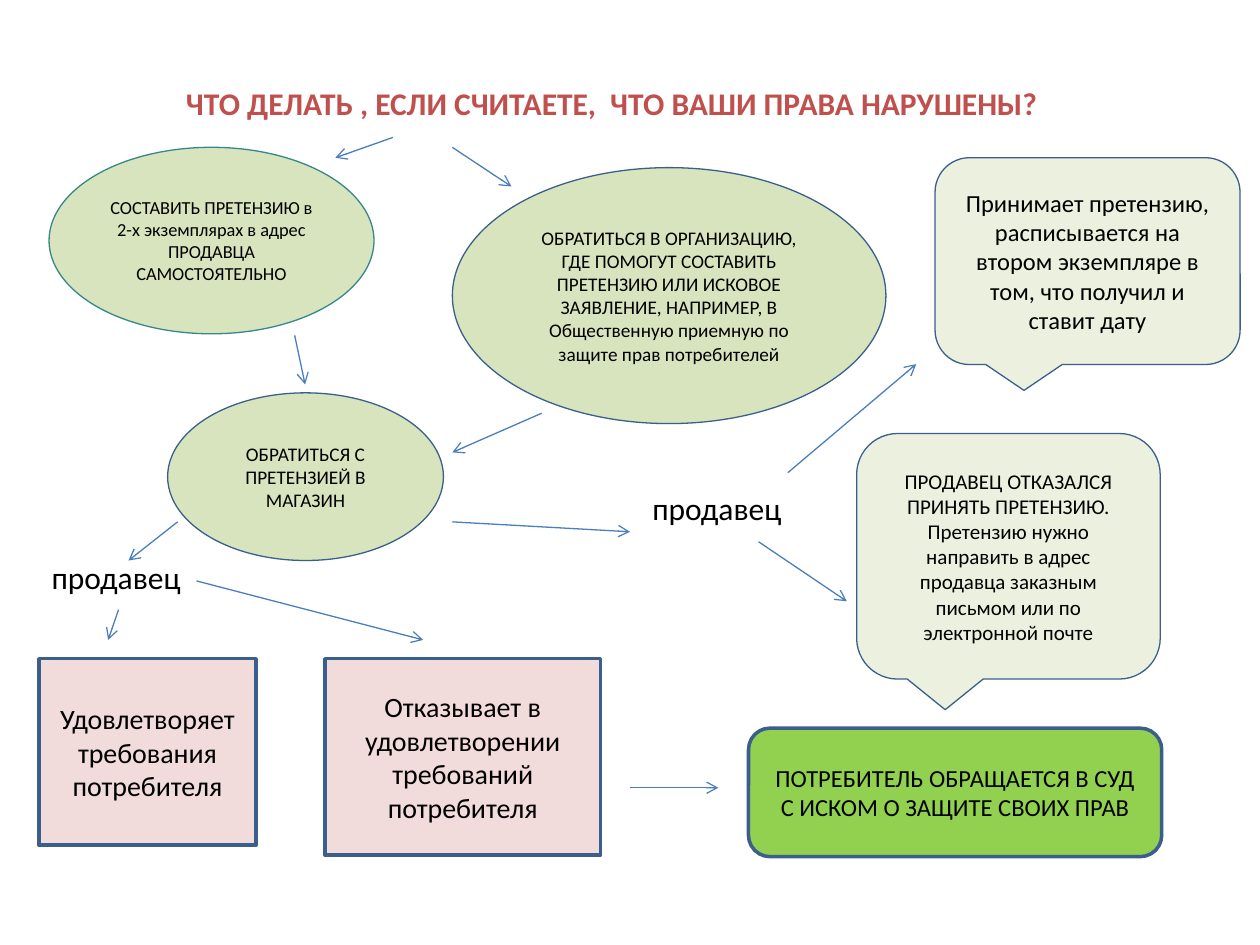
from dataclasses import dataclass

from lxml import etree
from pptx import Presentation
from pptx.dml.color import RGBColor
from pptx.enum.shapes import MSO_CONNECTOR as Connector, MSO_SHAPE as Shape
from pptx.enum.text import MSO_ANCHOR as Anchor, PP_ALIGN as Align
from pptx.oxml.ns import qn
from pptx.util import Cm, Pt


@dataclass(frozen=True)
class Theme:
    font: str = "Calibri"
    text: str = "000000"
    title: str = "C0504D"
    action: str = "D7E4BD"
    reply: str = "EBF1DE"
    decision: str = "F2DCDB"
    court: str = "92D050"
    outline: str = "3A5F8C"
    teal_outline: str = "36868C"
    arrow: str = "4B7EBC"
    thin: float = 0.75
    thick: float = 2
    heading_size: float = 18
    decision_size: float = 16
    large_size: float = 14
    medium_size: float = 12
    small_size: float = 11
    tiny_size: float = 10.5


class FlowSlide:
    def __init__(self, slide, theme):
        self.slide = slide
        self.theme = theme

    def fill_text(self, frame, lines, size, color, bold=False, align=Align.LEFT):
        frame.word_wrap = True
        for index, line in enumerate(lines):
            paragraph = frame.add_paragraph() if index else frame.paragraphs[0]
            paragraph.text = line
            paragraph.alignment = align
            font = paragraph.font
            font.name, font.size, font.bold = self.theme.font, Pt(size), bold
            font.color.rgb = RGBColor.from_string(color)

    def label(self, box, text, color=None, bold=False):
        text_box = self.slide.shapes.add_textbox(*map(Cm, box))
        self.fill_text(text_box.text_frame, [text], self.theme.heading_size,
                       color or self.theme.text, bold)

    def node(self, kind, box, lines, size, fill, width, outline=None):
        shape = self.slide.shapes.add_shape(kind, *map(Cm, box))
        shape.shadow.inherit = False
        shape.fill.solid()
        shape.fill.fore_color.rgb = RGBColor.from_string(fill)
        shape.line.color.rgb = RGBColor.from_string(outline or self.theme.outline)
        shape.line.width = Pt(width)
        shape.text_frame.vertical_anchor = Anchor.MIDDLE
        self.fill_text(shape.text_frame, lines, size, self.theme.text, align=Align.CENTER)

    def arrow(self, start, end):
        connector = self.slide.shapes.add_connector(
            Connector.STRAIGHT, *map(Cm, start + end))
        connector.line.color.rgb = RGBColor.from_string(self.theme.arrow)
        connector.line.width = Pt(self.theme.thin)
        properties = connector._element.spPr
        etree.SubElement(properties.find(qn("a:ln")), qn("a:tailEnd"), type="arrow")
        etree.SubElement(properties, qn("a:effectLst"))


def main():
    presentation = Presentation()
    presentation.slide_width, presentation.slide_height = Cm(25.4), Cm(19.05)
    theme = Theme()
    flow = FlowSlide(presentation.slides.add_slide(presentation.slide_layouts[6]), theme)

    # Title
    flow.label((3.5, 1.57, 20.3, 1.02),
               "ЧТО ДЕЛАТЬ , ЕСЛИ СЧИТАЕТЕ,  ЧТО ВАШИ ПРАВА НАРУШЕНЫ?",
               theme.title, bold=True)

    # Consumer's actions
    for box, text, size, outline in (
        ((0.99, 2.97, 6.55, 3.76),
         "СОСТАВИТЬ ПРЕТЕНЗИЮ в 2-х экземплярах в адрес ПРОДАВЦА САМОСТОЯТЕЛЬНО",
         theme.tiny_size, theme.teal_outline),
        ((9.12, 3.38, 8.74, 5.16),
         "ОБРАТИТЬСЯ В ОРГАНИЗАЦИЮ, ГДЕ ПОМОГУТ СОСТАВИТЬ ПРЕТЕНЗИЮ ИЛИ ИСКОВОЕ "
         "ЗАЯВЛЕНИЕ, НАПРИМЕР, В Общественную приемную по защите прав потребителей",
         theme.small_size, theme.outline),
        ((3.38, 7.92, 5.56, 3.38), "ОБРАТИТЬСЯ С ПРЕТЕНЗИЕЙ В МАГАЗИН",
         theme.small_size, theme.outline),
    ):
        flow.node(Shape.OVAL, box, [text], size, theme.action, theme.thin, outline)

    # Seller labels
    for box in ((0.79, 11.13, 4.37, 1.02), (12.9, 9.73, 4.17, 1.02)):
        flow.label(box, "продавец")

    # Seller's decisions
    for box, text in (
        ((0.79, 13.28, 4.37, 3.76), "Удовлетворяет требования потребителя"),
        ((6.55, 13.28, 5.56, 3.96), "Отказывает в удовлетворении требований потребителя"),
    ):
        flow.node(Shape.RECTANGLE, box, [text], theme.decision_size,
                  theme.decision, theme.thick)

    # Seller's replies to the claim
    for box, lines, size in (
        ((18.85, 3.18, 6.15, 4.17),
         ["Принимает претензию, расписывается на втором экземпляре в том, "
          "что получил и ставит дату"], theme.large_size),
        ((17.27, 8.74, 6.12, 4.95),
         ["ПРОДАВЕЦ ОТКАЗАЛСЯ ПРИНЯТЬ ПРЕТЕНЗИЮ.",
          "Претензию нужно направить в адрес продавца заказным письмом "
          "или по электронной почте"], theme.medium_size),
    ):
        flow.node(Shape.ROUNDED_RECTANGULAR_CALLOUT, box, lines, size,
                  theme.reply, theme.thin)

    # Court
    flow.node(Shape.ROUNDED_RECTANGLE, (15.09, 14.68, 8.33, 2.59),
              ["ПОТРЕБИТЕЛЬ ОБРАЩАЕТСЯ В СУД С ИСКОМ О ЗАЩИТЕ СВОИХ ПРАВ"],
              theme.large_size, theme.court, theme.thick)

    # Arrows between the steps
    for start, end in (
        ((7.92, 2.77), (6.76, 3.18)),
        ((9.12, 2.97), (10.31, 3.76)),
        ((5.94, 6.76), (6.15, 7.75)),
        ((10.92, 8.33), (9.12, 9.12)),
        ((9.12, 10.52), (12.7, 10.72)),
        ((15.88, 9.53), (18.47, 7.34)),
        ((15.29, 10.92), (17.07, 12.12)),
        ((3.58, 10.52), (2.59, 11.3)),
        ((3.96, 11.71), (8.53, 12.9)),
        ((2.39, 12.29), (2.18, 12.9)),
        ((12.7, 15.88), (14.48, 15.88)),
    ):
        flow.arrow(start, end)

    presentation.save("out.pptx")


if __name__ == "__main__":
    main()
